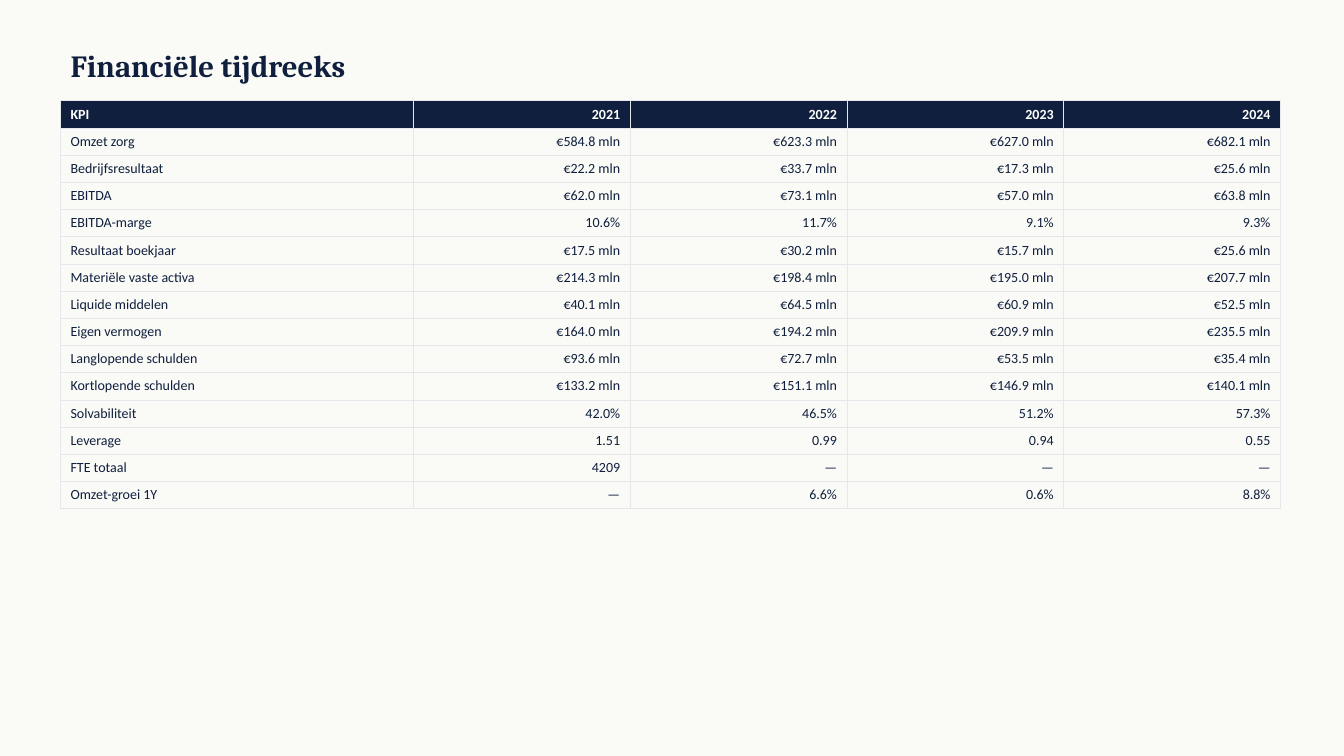
from dataclasses import dataclass

from lxml import etree
from pptx import Presentation
from pptx.dml.color import RGBColor
from pptx.enum import text
from pptx.oxml import ns
from pptx.util import Inches, Pt


@dataclass(frozen=True)
class Theme:
    paper: str = "FAFAF7"
    navy: str = "0F1F3D"
    white: str = "FFFFFF"
    grid: str = "E5E7EB"
    title_font: str = "Cambria"
    body_font: str = "Calibri"
    title_size: float = 22
    body_size: float = 10
    grid_width: float = 0.5


THEME = Theme()

TITLE = "Financiële tijdreeks"
HEADER = ("KPI", "2021", "2022", "2023", "2024")
KPIS = (
    ("Omzet zorg", "€584.8 mln", "€623.3 mln", "€627.0 mln", "€682.1 mln"),
    ("Bedrijfsresultaat", "€22.2 mln", "€33.7 mln", "€17.3 mln", "€25.6 mln"),
    ("EBITDA", "€62.0 mln", "€73.1 mln", "€57.0 mln", "€63.8 mln"),
    ("EBITDA-marge", "10.6%", "11.7%", "9.1%", "9.3%"),
    ("Resultaat boekjaar", "€17.5 mln", "€30.2 mln", "€15.7 mln", "€25.6 mln"),
    ("Materiële vaste activa", "€214.3 mln", "€198.4 mln", "€195.0 mln", "€207.7 mln"),
    ("Liquide middelen", "€40.1 mln", "€64.5 mln", "€60.9 mln", "€52.5 mln"),
    ("Eigen vermogen", "€164.0 mln", "€194.2 mln", "€209.9 mln", "€235.5 mln"),
    ("Langlopende schulden", "€93.6 mln", "€72.7 mln", "€53.5 mln", "€35.4 mln"),
    ("Kortlopende schulden", "€133.2 mln", "€151.1 mln", "€146.9 mln", "€140.1 mln"),
    ("Solvabiliteit", "42.0%", "46.5%", "51.2%", "57.3%"),
    ("Leverage", "1.51", "0.99", "0.94", "0.55"),
    ("FTE totaal", "4209", "—", "—", "—"),
    ("Omzet-groei 1Y", "—", "6.6%", "0.6%", "8.8%"),
)


def add_run(p, words, font, size, color, bold):
    r = p.add_run()
    r.text = words
    r.font.name = font
    r.font.size = Pt(size)
    r.font.bold = bold
    r.font.color.rgb = RGBColor.from_string(color)


def set_borders(cell):
    tc_pr = cell._tc.get_or_add_tcPr()
    for side in ("a:lnL", "a:lnR", "a:lnT", "a:lnB"):
        ln = etree.SubElement(tc_pr, ns.qn(side), w=str(Pt(THEME.grid_width)))
        fill = etree.SubElement(ln, ns.qn("a:solidFill"))
        etree.SubElement(fill, ns.qn("a:srgbClr"), val=THEME.grid)


def place_title(s, left, top, width, height):
    sp = s.shapes.title
    sp.left, sp.top = Inches(left), Inches(top)
    sp.width, sp.height = Inches(width), Inches(height)
    tf = sp.text_frame
    tf.word_wrap = True
    tf.auto_size = text.MSO_AUTO_SIZE.NONE
    tf.vertical_anchor = text.MSO_ANCHOR.MIDDLE
    p = tf.paragraphs[0]
    p.alignment = text.PP_ALIGN.LEFT
    add_run(p, TITLE, THEME.title_font, THEME.title_size, THEME.navy, True)


def place_kpi_table(s, left, top, width, label_width=3.5, row_height=0.27):
    rows = (HEADER, *KPIS)
    table = s.shapes.add_table(
        len(rows), len(HEADER), Inches(left), Inches(top),
        Inches(width), Inches(row_height * len(rows))).table
    table.horz_banding = False

    # Label column first, years share the rest equally
    year_width = (width - label_width) / (len(HEADER) - 1)
    for i, column in enumerate(table.columns):
        column.width = Inches(year_width if i else label_width)

    for i, values in enumerate(rows):
        table.rows[i].height = Inches(row_height)
        is_header = i == 0
        for j, value in enumerate(values):
            cell = table.cell(i, j)
            set_borders(cell)
            if is_header:
                cell.fill.solid()
                cell.fill.fore_color.rgb = RGBColor.from_string(THEME.navy)
            else:
                cell.fill.background()
            p = cell.text_frame.paragraphs[0]
            p.alignment = text.PP_ALIGN.RIGHT if j else text.PP_ALIGN.LEFT
            add_run(p, value, THEME.body_font, THEME.body_size,
                    THEME.white if is_header else THEME.navy, is_header)


def add_kpi_slide(prs):
    s = prs.slides.add_slide(prs.slide_layouts[5])
    s.background.fill.solid()
    s.background.fill.fore_color.rgb = RGBColor.from_string(THEME.paper)
    place_title(s, 0.6, 0.4, 12, 0.5)
    place_kpi_table(s, 0.6, 1, 12.1)


def main():
    prs = Presentation()
    prs.slide_width, prs.slide_height = Inches(13.33), Inches(7.5)
    add_kpi_slide(prs)
    prs.save("out.pptx")


if __name__ == "__main__":
    main()
